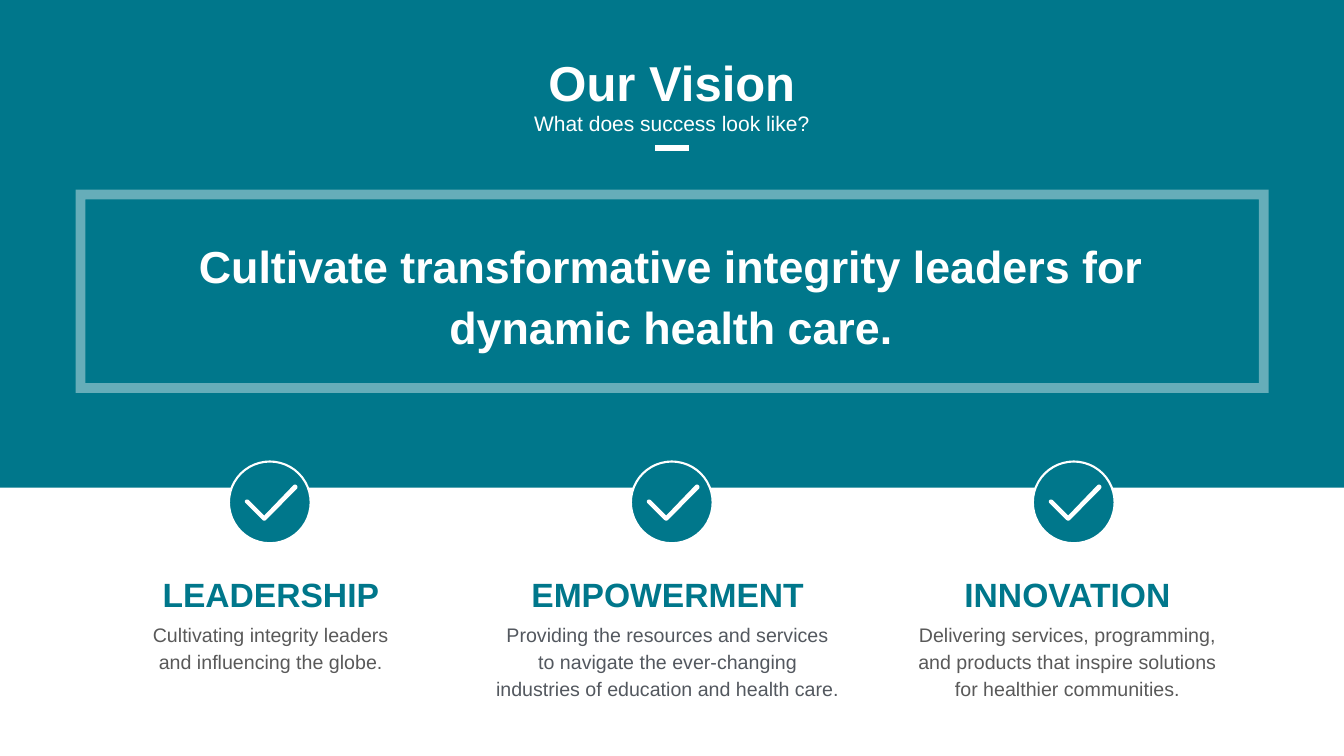
"""Build the "Our Vision" slide with a statement and three goals."""
import pptx
import pptx.dml.color
import pptx.enum.shapes
import pptx.enum.text
import pptx.oxml
import pptx.oxml.ns
import pptx.util
from pptx.util import Cm

COLORS = {"teal": "00778B", "white": "FFFFFF", "gray": "595959", "slate": "53585F"}
SHAPES = pptx.enum.shapes.MSO_SHAPE
CENTER_X = 16.93
GOAL_STEP = 10.13
BADGE_SIZE = 2.06
BADGE_TOP = 11.63
TICK = [(168, 61), (165, 61), (89, 140), (48, 99), (43, 99), (43, 102),
        (86, 145), (89, 147), (92, 145), (170, 66), (170, 63)]
GOALS = [
    ("LEADERSHIP", "Cultivating integrity leaders and influencing the globe.",
     3.33, 6.99, "gray"),
    ("EMPOWERMENT", "Providing the resources and services to navigate the "
     "ever-changing industries of education and health care.", 12.24, 9.17, "slate"),
    ("INNOVATION", "Delivering services, programming, and products that inspire "
     "solutions for healthier communities.", 22.58, 8.64, "gray"),
]


def style(paragraph, size, color, bold=False, spacing=1.0, after=0):
    paragraph.alignment = pptx.enum.text.PP_ALIGN.CENTER
    paragraph.line_spacing = spacing
    paragraph.space_before = pptx.util.Pt(0)
    paragraph.space_after = pptx.util.Pt(after)
    for run in paragraph.runs:
        run.font.name = "Arial"
        run.font.size = pptx.util.Pt(size)
        run.font.bold = bold
        run.font.color.rgb = pptx.dml.color.RGBColor.from_string(COLORS[color])


def paint(shape, fill=None, line=None, width=1.5):
    shape.shadow.inherit = False
    if fill:
        shape.fill.solid()
        shape.fill.fore_color.rgb = pptx.dml.color.RGBColor.from_string(COLORS[fill])
    else:
        shape.fill.background()
    if line:
        shape.line.color.rgb = pptx.dml.color.RGBColor.from_string(COLORS[line])
        shape.line.width = pptx.util.Pt(width)
    else:
        shape.line.fill.background()


deck = pptx.Presentation()
deck.slide_width, deck.slide_height = Cm(33.87), Cm(19.05)
slide = deck.slides.add_slide(deck.slide_layouts[5])
shapes = slide.shapes

band = shapes.add_shape(SHAPES.RECTANGLE, 0, 0, deck.slide_width, Cm(12.29))
paint(band, fill="teal")

title = shapes.title
title.left, title.top, title.width, title.height = 0, Cm(1.47), deck.slide_width, Cm(1.4)
title.text_frame.text = "Our Vision"
title.text_frame.auto_size = pptx.enum.text.MSO_AUTO_SIZE.NONE
title.text_frame.vertical_anchor = pptx.enum.text.MSO_ANCHOR.MIDDLE
style(title.text_frame.paragraphs[0], 35, "white", bold=True, spacing=0.9)
title.element.addprevious(band.element)

statement = shapes.add_textbox(Cm(2.64), Cm(5.69), Cm(28.55), Cm(4.47)).text_frame
statement.word_wrap = True
statement.text = "Cultivate transformative integrity leaders for dynamic health care."
style(statement.paragraphs[0], 32, "white", bold=True, spacing=1.14, after=12)

frame = shapes.add_shape(SHAPES.RECTANGLE, Cm(2.03), Cm(4.9), Cm(29.82), Cm(4.88))
paint(frame, line="white", width=7)
frame_line = frame.line.fill._xPr
frame_color = frame_line.find(".//" + pptx.oxml.ns.qn("a:srgbClr"))
namespace = pptx.oxml.ns.nsdecls("a")
frame_color.append(pptx.oxml.parse_xml(f'<a:alpha {namespace} val="40000"/>'))
frame_line.append(pptx.oxml.parse_xml(f'<a:miter {namespace} lim="800000"/>'))

question = shapes.add_textbox(Cm(3.61), Cm(2.67), Cm(26.64), Cm(0.89)).text_frame
question.word_wrap = True
question.text = "What does success look like?"
style(question.paragraphs[0], 15, "white")

dash = shapes.add_connector(pptx.enum.shapes.MSO_CONNECTOR.STRAIGHT,
                            Cm(16.51), Cm(3.73), Cm(17.37), Cm(3.73))
dash.line.color.rgb = pptx.dml.color.RGBColor.from_string(COLORS["white"])
dash.line.width = pptx.util.Pt(4)
dash.element.spPr.append(pptx.oxml.parse_xml(f"<a:effectLst {namespace}/>"))

for index, (heading, detail, left, width, detail_color) in enumerate(GOALS):
    badge_left = CENTER_X + (index - 1) * GOAL_STEP - BADGE_SIZE / 2
    badge = shapes.add_shape(SHAPES.OVAL, Cm(badge_left), Cm(BADGE_TOP),
                             Cm(BADGE_SIZE), Cm(BADGE_SIZE))
    paint(badge, fill="teal", line="white")

    outline = shapes.build_freeform(*TICK[0], scale=Cm(0.01))
    outline.add_line_segments(TICK[1:], close=True)
    paint(outline.convert_to_shape(Cm(badge_left), Cm(BADGE_TOP)),
          fill="white", line="white")

    goal = shapes.add_textbox(Cm(left), Cm(14.2), Cm(width), Cm(3.56)).text_frame
    goal.word_wrap = True
    goal.text = heading
    style(goal.paragraphs[0], 24, "teal", bold=True, spacing=1.14, after=4)
    description = goal.add_paragraph()
    description.text = detail
    style(description, 14, detail_color, spacing=1.14, after=12)

deck.save("out.pptx")
